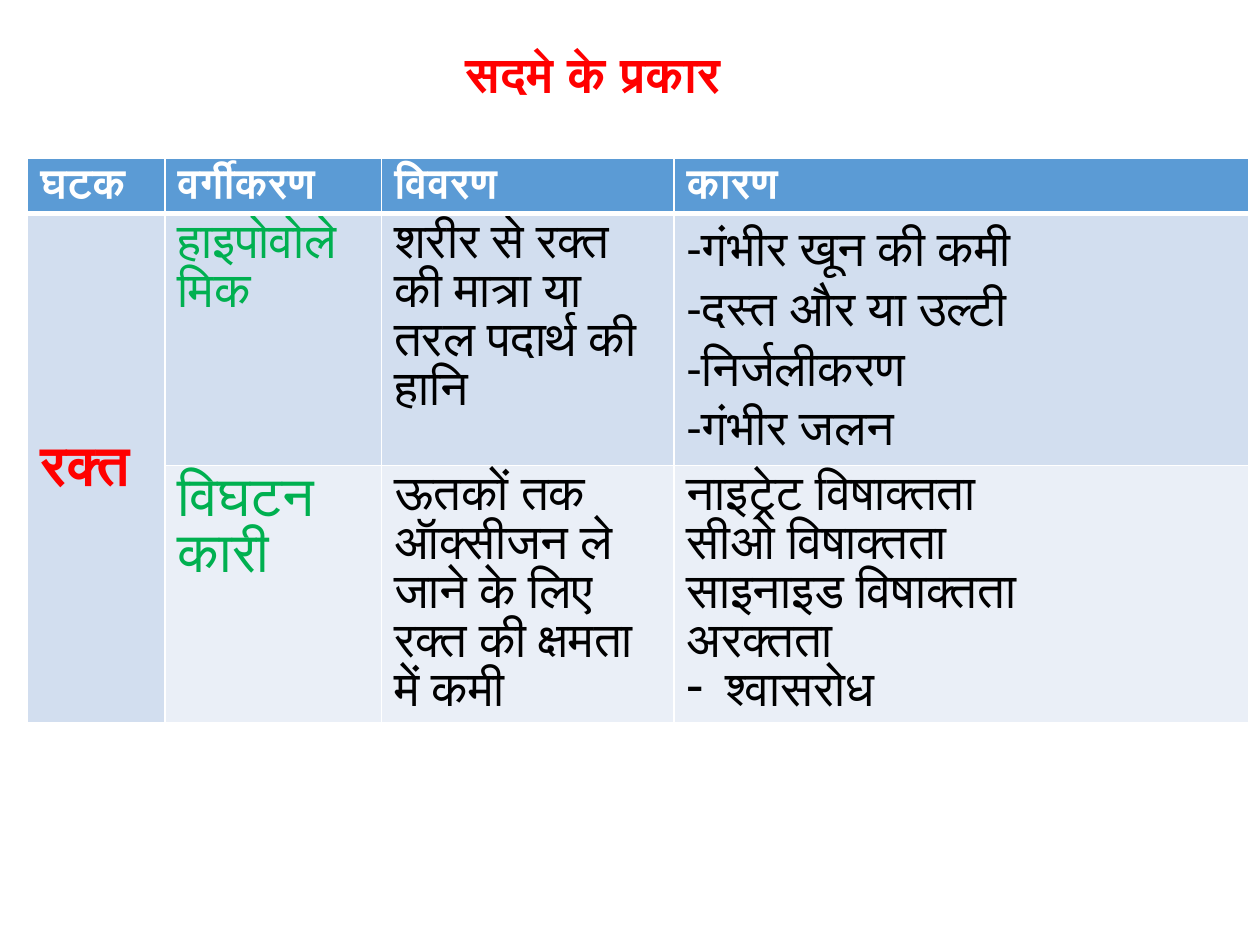
from dataclasses import dataclass
from typing import NamedTuple

from lxml.etree import SubElement
from pptx import Presentation
from pptx.dml.color import RGBColor
from pptx.enum.text import MSO_ANCHOR
from pptx.oxml.ns import qn
from pptx.util import Inches, Pt


@dataclass(frozen=True)
class Theme:
    font: str = "Calibri"
    white: str = "FFFFFF"
    black: str = "000000"
    red: str = "FF0000"
    green: str = "00B050"
    head: str = "5B9BD5"
    band: str = "D2DEEF"
    pale: str = "EAEFF7"
    small: int = 24
    body: int = 28
    large: int = 32
    thin: int = 1
    thick: int = 3


class Entry(NamedTuple):
    row: int
    col: int
    lines: list[str]
    fill: str
    color: str
    size: int = 28
    bold: bool = False
    dash: int = -1


T = Theme()
WIDE, HIGH = 10, 7.5
COLS = [1.09, 1.72, 2.32, 4.56]
ROWS = [0.43, 1.99, 2.04]
HEADS = ["घटक", "वर्गीकरण", "विवरण", "कारण"]
CELLS = [
    *(Entry(0, i, [head], T.head, T.white, T.small, True) for i, head in enumerate(HEADS)),
    Entry(1, 0, ["रक्त"], T.band, T.red, T.large, True),
    Entry(1, 1, ["हाइपोवोलेमिक"], T.band, T.green),
    Entry(1, 2, ["शरीर से रक्त की मात्रा या तरल पदार्थ की हानि"], T.band, T.black),
    Entry(1, 3, ["-गंभीर खून की कमी", "-दस्त और या उल्टी", "-निर्जलीकरण", "-गंभीर जलन"],
          T.band, T.black),
    Entry(2, 1, ["विघटनकारी"], T.pale, T.green, T.large),
    Entry(2, 2, ["ऊतकों तक ऑक्सीजन ले जाने के लिए रक्त की क्षमता में कमी"], T.pale, T.black),
    Entry(2, 3, ["नाइट्रेट विषाक्तता", "सीओ विषाक्तता", "साइनाइड विषाक्तता", "अरक्तता",
                 "श्वासरोध"], T.pale, T.black, dash=4),
]


def write(frame, lines: list[str], *, color: str, size: int, bold: bool = False,
          dash: int = -1) -> None:
    """Write one paragraph per line, with a dash bullet on the line numbered dash."""
    for i, line in enumerate(lines):
        par = frame.paragraphs[0] if i == 0 else frame.add_paragraph()
        if i == dash:
            prop = par._p.get_or_add_pPr()
            prop.set("marL", str(Inches(0.31)))
            prop.set("indent", str(-Inches(0.31)))
            SubElement(prop, qn("a:buChar"), char="-")
        run = par.add_run()
        run.text = line
        font = run.font
        font.name, font.size, font.bold = T.font, Pt(size), bold
        font.color.rgb = RGBColor.from_string(color)


def edge(cell, foot: int) -> None:
    """Draw the white rules of a cell, with the lower one foot points wide."""
    prop = cell._tc.get_or_add_tcPr()
    for side, width in zip("LRTB", (T.thin, T.thin, T.thin, foot)):
        line = SubElement(prop, qn(f"a:ln{side}"), w=str(Pt(width)))
        SubElement(SubElement(line, qn("a:solidFill")), qn("a:srgbClr"), val=T.white)


def paint(grid, item: Entry) -> None:
    """Fill, rule and write one table cell."""
    cell = grid.cell(item.row, item.col)
    edge(cell, T.thick if item.row == 0 else T.thin)
    cell.fill.solid()
    cell.fill.fore_color.rgb = RGBColor.from_string(item.fill)
    if cell.is_merge_origin:
        cell.vertical_anchor = MSO_ANCHOR.MIDDLE
    write(cell.text_frame, item.lines, color=item.color, size=item.size,
          bold=item.bold, dash=item.dash)


def main() -> None:
    """Build the slide and save it."""
    deck = Presentation()
    deck.slide_width, deck.slide_height = Inches(WIDE), Inches(HIGH)
    slide = deck.slides.add_slide(deck.slide_layouts[6])
    grid = slide.shapes.add_table(
        len(ROWS), len(COLS), Inches(0.022 * WIDE), Inches(0.168 * HIGH),
        Inches(sum(COLS)), Inches(sum(ROWS))).table
    for col, width in zip(grid.columns, COLS):
        col.width = Inches(width)
    for row, height in zip(grid.rows, ROWS):
        row.height = Inches(height)
    grid.cell(1, 0).merge(grid.cell(2, 0))
    for item in CELLS:
        paint(grid, item)
    title = slide.shapes.add_textbox(
        Inches(0.36 * WIDE), Inches(0.04 * HIGH), Inches(0.25 * WIDE), Inches(0.08 * HIGH))
    title.text_frame.word_wrap = False
    write(title.text_frame, ["सदमे के प्रकार"], color=T.red, size=T.body, bold=True)
    deck.save("out.pptx")


if __name__ == "__main__":
    main()
